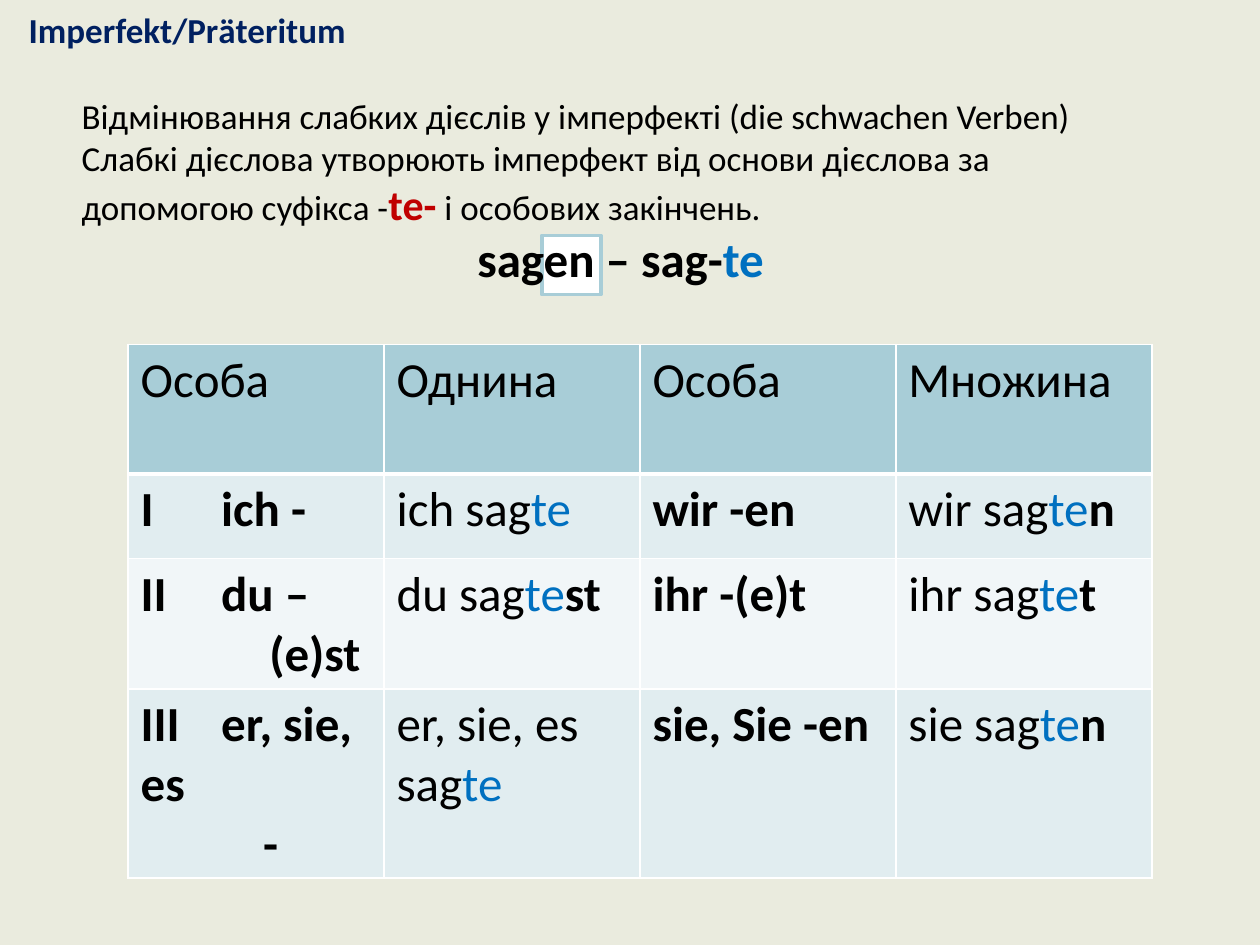
from lxml import etree
from pptx import Presentation
from pptx.dml.color import RGBColor
from pptx.enum.shapes import MSO_SHAPE
from pptx.enum.text import MSO_ANCHOR, MSO_AUTO_SIZE, PP_ALIGN
from pptx.oxml.ns import qn
from pptx.util import Pt

LEFT, CENTER, RIGHT = PP_ALIGN.LEFT, PP_ALIGN.CENTER, PP_ALIGN.RIGHT
RECTANGLE = MSO_SHAPE.RECTANGLE
MIDDLE, TOP = MSO_ANCHOR.MIDDLE, MSO_ANCHOR.TOP
NO_AUTOFIT = MSO_AUTO_SIZE.NONE

BACKGROUND = RGBColor(0xEA, 0xEB, 0xDE)
BLACK = RGBColor(0, 0, 0)
WHITE = RGBColor(0xFF, 0xFF, 0xFF)
NAVY = RGBColor(0x00, 0x20, 0x60)
RED = RGBColor(0xC0, 0x00, 0x00)
BLUE = RGBColor(0x00, 0x70, 0xC0)
TEAL = RGBColor(0xA8, 0xCD, 0xD7)
BAND_DARK = RGBColor(0xE1, 0xED, 0xF0)
BAND_LIGHT = RGBColor(0xF1, 0xF6, 0xF8)
FONT = "Calibri"

# Content: a paragraph is (alignment, [(text, style name), ...])
STYLES = {
    "title": {"size": Pt(20), "bold": True, "color": NAVY},
    "body": {"size": Pt(20), "bold": False, "color": BLACK},
    "suffix": {"size": Pt(24), "bold": True, "color": RED},
    "plain": {"size": Pt(28), "bold": False, "color": BLACK},
    "strong": {"size": Pt(28), "bold": True, "color": BLACK},
    "te": {"size": Pt(28), "bold": False, "color": BLUE},
    "strong te": {"size": Pt(28), "bold": True, "color": BLUE},
}
TITLE = [(CENTER, [("Imperfekt/Prӓteritum", "title")])]
RULE = [
    (LEFT, [
        ("Відмінювання слабких дієслів у імперфекті (die schwachen Verben) "
         "Слабкі дієслова утворюють імперфект від основи дієслова за "
         "допомогою суфікса -", "body"),
        ("te-", "suffix"),
        (" і особових закінчень.", "body"),
    ]),
    (CENTER, [("sagen – sag-", "strong"), ("te", "strong te")]),
]
HEADERS = ["Особа", "Однина", "Особа", "Множина"]
# Person lines, singular stem and ending, plural person, plural stem and ending
FORMS = [
    ([(LEFT, "I\tich -")], "ich sag", "", "wir -en", "wir sag", "n"),
    ([(LEFT, "II\tdu –"), (RIGHT, "(e)st ")],
     "du sag", "st", "ihr -(e)t", "ihr sag", "t"),
    ([(LEFT, "III\ter, sie, es"), (LEFT, "\t\t-")],
     "er, sie, es sag", "", "sie, Sie -en", "sie sag", "n"),
]

# Layout in points
TITLE_BOX = (0, 0, 214, 34)
RULE_BOX = (39.6, 50.4, 630, 140.4)
ENDING_BOX = (309.6, 134.6, 33.8, 33.8)
TABLE_LEFT, TABLE_TOP = 73.2, 196.8
COLUMN_WIDTH = 146.25
ROW_HEIGHTS = [74, 48.5, 74.4, 108]
TAB_STOPS = [46, 70]


def place(box):
    return [Pt(value) for value in box]


def write(frame, paragraphs):
    for index, (alignment, spans) in enumerate(paragraphs):
        para = frame.paragraphs[0] if index == 0 else frame.add_paragraph()
        para.alignment = alignment
        para.space_before = para.space_after = Pt(0)
        for text, style in spans:
            span = para.add_run()
            span.text = text
            span.font.name = FONT
            for name, value in STYLES[style].items():
                if name == "color":
                    span.font.color.rgb = value
                else:
                    setattr(span.font, name, value)


def add_tabs(para):
    tabs = etree.SubElement(para._p.get_or_add_pPr(), qn("a:tabLst"))
    for stop in TAB_STOPS:
        etree.SubElement(tabs, qn("a:tab"), pos=str(Pt(stop)), algn="l")


def add_border(cell, side, width):
    line = etree.SubElement(cell._tc.get_or_add_tcPr(), qn("a:ln" + side),
                            w=str(Pt(width)))
    fill = etree.SubElement(line, qn("a:solidFill"))
    etree.SubElement(fill, qn("a:srgbClr"), val=str(WHITE))


def conjugated(stem, ending):
    spans = [(stem, "plain"), ("te", "te")]
    return [(LEFT, spans + ([(ending, "strong")] if ending else []))]


def table_rows():
    yield [[(LEFT, [(header, "plain")])] for header in HEADERS]
    for persons, stem, ending, plural, plural_stem, plural_ending in FORMS:
        yield [
            [(alignment, [(text, "strong")]) for alignment, text in persons],
            conjugated(stem, ending),
            [(LEFT, [(plural, "strong")])],
            conjugated(plural_stem, plural_ending),
        ]


def main():
    deck = Presentation()
    deck.slide_width, deck.slide_height = Pt(720), Pt(540)
    page = deck.slides.add_slide(deck.slide_layouts[5])
    page.background.fill.solid()
    page.background.fill.fore_color.rgb = BACKGROUND

    # Title
    title = page.shapes.title
    title.left, title.top, title.width, title.height = place(TITLE_BOX)
    title.text_frame.auto_size = NO_AUTOFIT
    title.text_frame.vertical_anchor = MIDDLE
    write(title.text_frame, TITLE)

    # Frame behind the infinitive ending
    ending = page.shapes.add_shape(RECTANGLE, *place(ENDING_BOX))
    ending.shadow.inherit = False
    ending.fill.solid()
    ending.fill.fore_color.rgb = WHITE
    ending.line.color.rgb = TEAL
    ending.line.width = Pt(2)

    # Rule and example
    rule = page.shapes.add_textbox(*place(RULE_BOX))
    rule.text_frame.word_wrap = True
    rule.text_frame.vertical_anchor = TOP
    write(rule.text_frame, RULE)

    # Conjugation table
    size = (COLUMN_WIDTH * len(HEADERS), sum(ROW_HEIGHTS))
    table = page.shapes.add_table(len(ROW_HEIGHTS), len(HEADERS),
                                  *place((TABLE_LEFT, TABLE_TOP, *size))).table
    for column in table.columns:
        column.width = Pt(COLUMN_WIDTH)
    for row_index, paragraphs in enumerate(table_rows()):
        table.rows[row_index].height = Pt(ROW_HEIGHTS[row_index])
        band = BAND_DARK if row_index % 2 else BAND_LIGHT
        borders = {"L": 1, "R": 1, "T": 3 if row_index == 1 else 1,
                   "B": 3 if row_index == 0 else 1}
        for column_index, content in enumerate(paragraphs):
            cell = table.cell(row_index, column_index)
            for side, width in borders.items():
                add_border(cell, side, width)
            cell.fill.solid()
            cell.fill.fore_color.rgb = TEAL if row_index == 0 else band
            write(cell.text_frame, content)
            for para in cell.text_frame.paragraphs:
                if "\t" in para.text:
                    add_tabs(para)

    deck.save("out.pptx")


if __name__ == "__main__":
    main()
